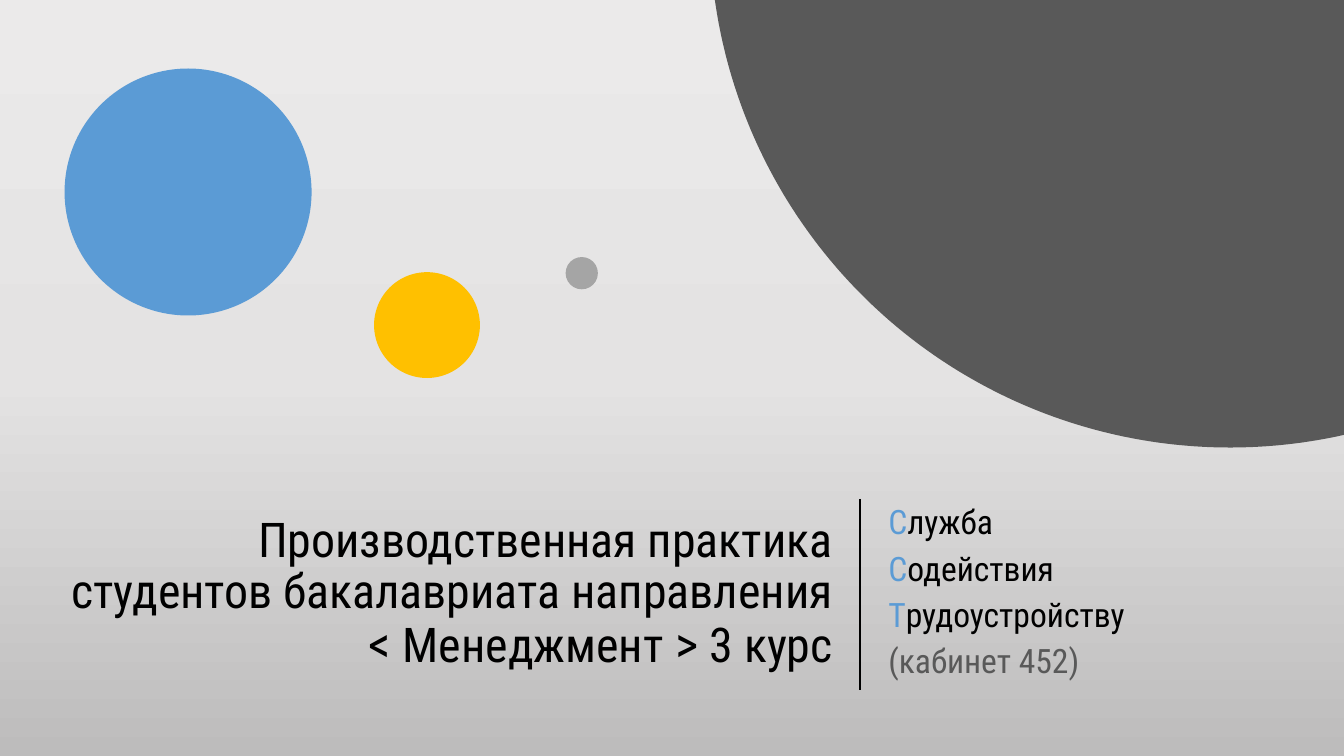
"""Build the title slide about the third-year work placement."""
import math

import pptx
import pptx.dml.color
import pptx.enum.dml
import pptx.enum.shapes
import pptx.enum.text
import pptx.oxml.ns
import pptx.util
import copy
from lxml import etree

WIDTH, HEIGHT = 13.33, 7.5
FONT = "Roboto Condensed"
COLORS = {"blue": "5B9BD5", "yellow": "FFC000", "silver": "A5A5A5",
          "gray": "595959", "black": "000000"}
BACKGROUND = [(0, "EBEAEA"), (0.5, "E4E3E3"), (1, "BDBCBC")]
TITLE = [("Производственная практика студентов бакалавриата направления ", 34.2),
         ("< ", 36), ("Менеджмент", 34.2), (" >", 36), (" 3 курс", 34.2)]
SERVICE = [[("С", "blue"), ("лужба", "black")],
           [("С", "blue"), ("одействия", "black")],
           [("Т", "blue"), ("рудоустройству", "black")],
           [("(кабинет 452)", "gray")]]
CIRCLES = [(0.64, 0.68, 2.45, "blue"), (3.71, 2.7, 1.05, "yellow"),
           (5.61, 2.55, 0.32, "silver")]
PLANET = {"x": 12.2, "y": -0.72, "radius": 5.16}
ARC_STEPS = 120
BAND_TOP, BAND_HEIGHT = 4.95, 1.9
TITLE_LEFT, TITLE_WIDTH = 0.46, 7.9
DIVIDER_X = 8.53
SERVICE_LEFT, SERVICE_WIDTH = 8.71, 3.56

inch = pptx.util.Inches
point = pptx.util.Pt
align = pptx.enum.text.PP_ALIGN


def color(name):
    return pptx.dml.color.RGBColor.from_string(COLORS.get(name, name))


def paint(shape, name):
    shape.fill.solid()
    shape.fill.fore_color.rgb = color(name)
    shape.line.fill.background()
    shape.shadow.inherit = False


def paint_background(page):
    fill = page.background.fill
    fill.gradient()
    fill.gradient_angle = 270
    stops = next(page.element.iter(pptx.oxml.ns.qn("a:gsLst")))
    stops.insert(1, copy.deepcopy(stops[0]))
    for stop, (position, shade) in zip(fill.gradient_stops, BACKGROUND):
        stop.position = position
        stop.color.rgb = color(shade)


def place(box, left, width):
    box.left, box.top = inch(left), inch(BAND_TOP)
    box.width, box.height = inch(width), inch(BAND_HEIGHT)
    frame = box.text_frame
    frame.word_wrap = True
    frame.auto_size = pptx.enum.text.MSO_AUTO_SIZE.NONE
    frame.vertical_anchor = pptx.enum.text.MSO_ANCHOR.MIDDLE
    return frame


def add_title(page):
    para = place(page.shapes.title, TITLE_LEFT, TITLE_WIDTH).paragraphs[0]
    para.alignment = align.RIGHT
    para.line_spacing = 0.9
    para.font.name = FONT
    para.font.color.rgb = color("black")
    for text, size in TITLE:
        span = para.add_run()
        span.text = text
        span.font.size = point(size)


def add_service(page):
    frame = place(page.placeholders[1], SERVICE_LEFT, SERVICE_WIDTH)
    for row, spans in enumerate(SERVICE):
        para = frame.add_paragraph() if row else frame.paragraphs[0]
        para.alignment = align.LEFT
        para.line_spacing = 0.8
        para.space_before = point(10)
        para.font.name = FONT
        para.font.size = point(24)
        for text, shade in spans:
            span = para.add_run()
            span.text = text
            span.font.color.rgb = color(shade)


def add_planet(page):
    x, y, radius = PLANET["x"], PLANET["y"], PLANET["radius"]
    start = math.asin((WIDTH - x) / radius)
    end = -math.acos(-y / radius)
    angles = [start + (end - start) * step / ARC_STEPS for step in range(ARC_STEPS + 1)]
    arc = [(inch(x + radius * math.sin(angle)), inch(y + radius * math.cos(angle)))
           for angle in angles]
    builder = page.shapes.build_freeform(inch(WIDTH), 0)
    builder.add_line_segments(arc, close=True)
    paint(builder.convert_to_shape(), "gray")


def add_divider(page):
    line = page.shapes.add_connector(
        pptx.enum.shapes.MSO_CONNECTOR.STRAIGHT, inch(DIVIDER_X), inch(BAND_TOP),
        inch(DIVIDER_X), inch(BAND_TOP + BAND_HEIGHT))
    line.line.color.rgb = color("black")
    line.line.width = point(1.5)
    etree.SubElement(line.element.spPr, pptx.oxml.ns.qn("a:effectLst"))


def main():
    deck = pptx.Presentation()
    deck.slide_width, deck.slide_height = inch(WIDTH), inch(HEIGHT)
    page = deck.slides.add_slide(deck.slide_layouts[0])
    paint_background(page)
    add_title(page)
    add_service(page)
    for left, top, size, shade in CIRCLES:
        circle = page.shapes.add_shape(pptx.enum.shapes.MSO_SHAPE.OVAL, inch(left),
                                       inch(top), inch(size), inch(size))
        paint(circle, shade)
    add_planet(page)
    add_divider(page)
    deck.save("out.pptx")


if __name__ == "__main__":
    main()
